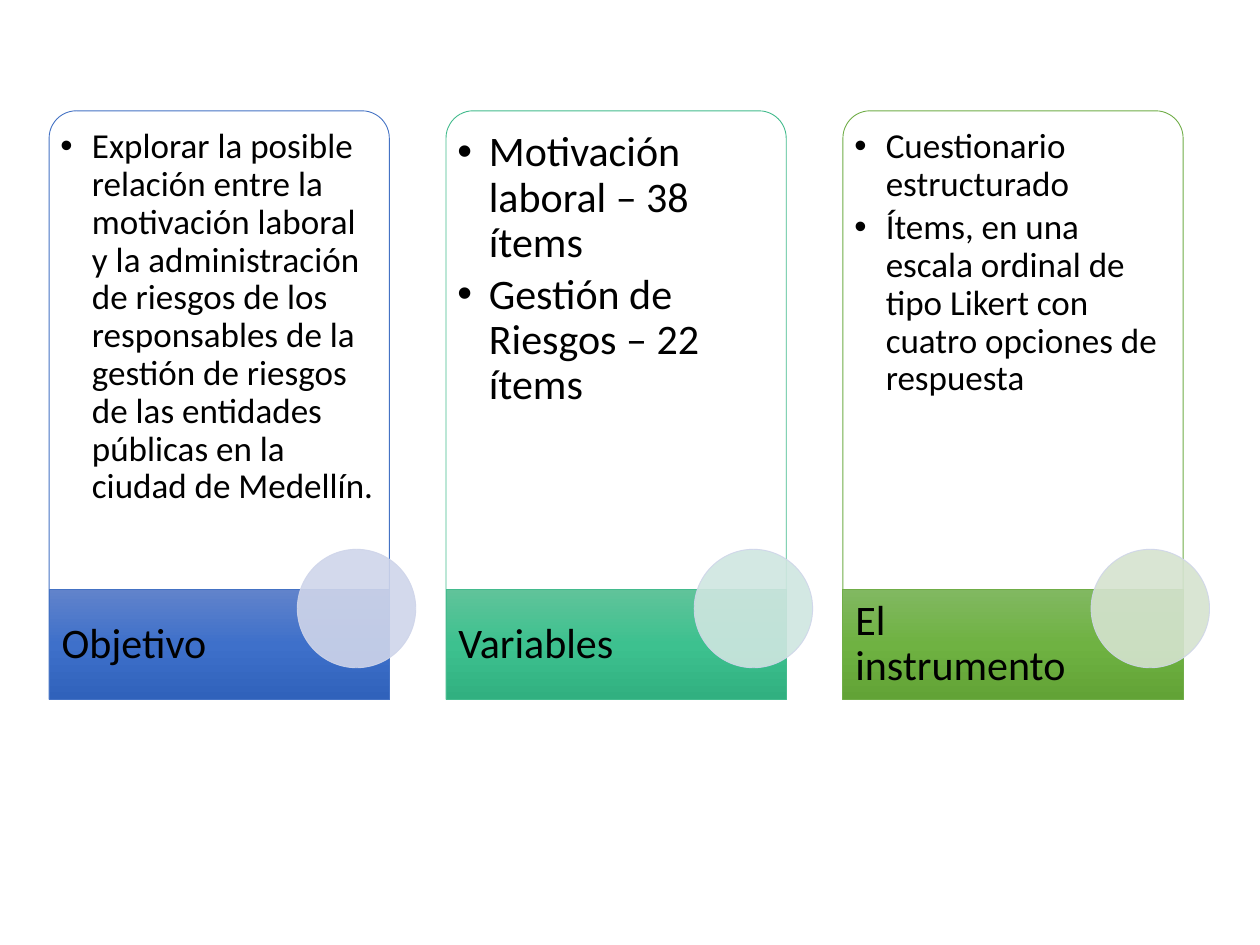
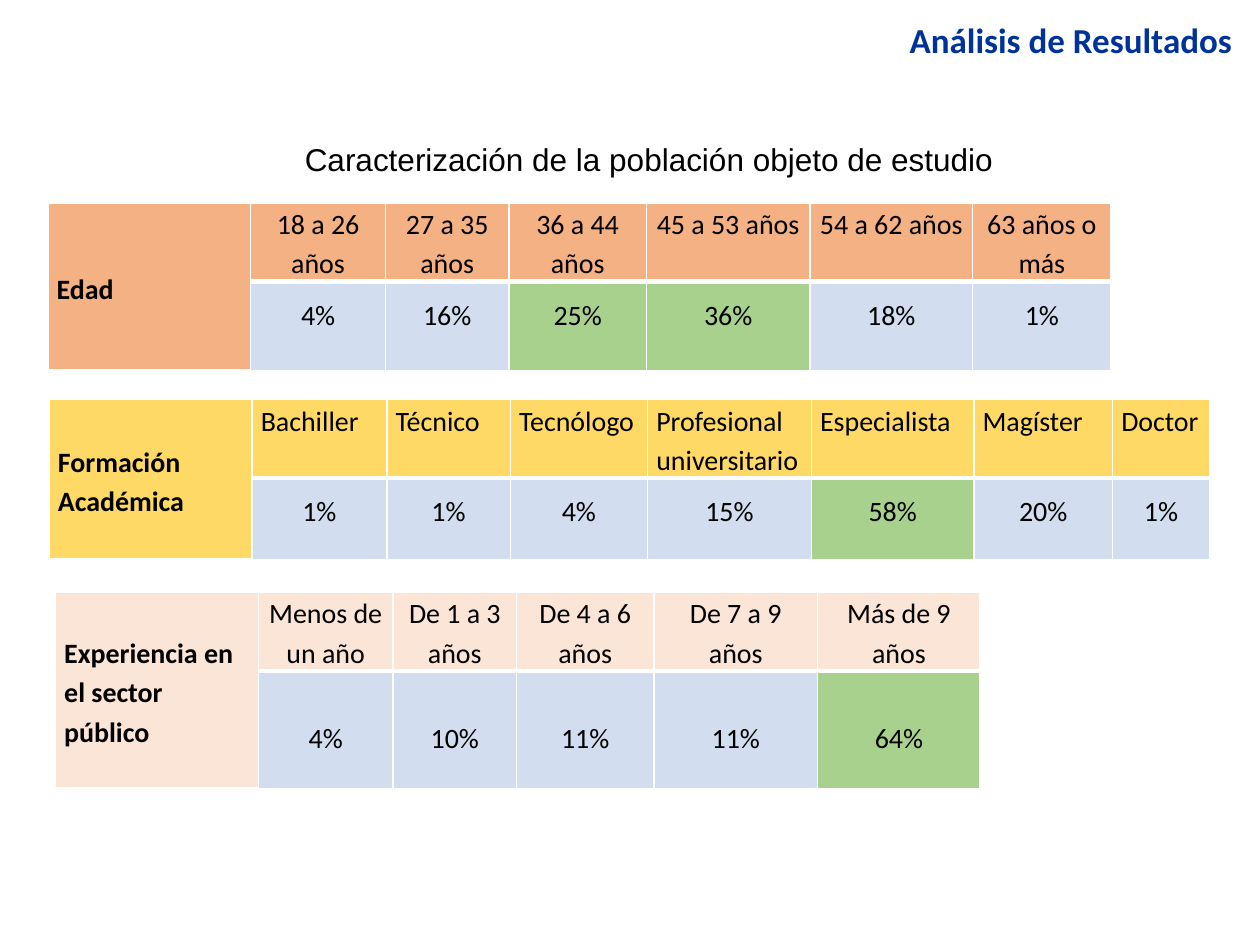
from dataclasses import dataclass

import pptx
import pptx.dml.color
import pptx.enum.shapes
import pptx.enum.text
import pptx.oxml.ns
import pptx.util
from lxml import etree

RGBColor = pptx.dml.color.RGBColor
SHAPE = pptx.enum.shapes.MSO_SHAPE
ALIGN = pptx.enum.text.PP_ALIGN
ANCHOR = pptx.enum.text.MSO_ANCHOR
Inches, Pt, qn = pptx.util.Inches, pptx.util.Pt, pptx.oxml.ns.qn

# Colours
BLACK = RGBColor(0x00, 0x00, 0x00)
WHITE = RGBColor(0xFF, 0xFF, 0xFF)
NAVY = RGBColor(0x00, 0x33, 0x99)
BLUE = RGBColor(0x44, 0x72, 0xC4)
TEAL = RGBColor(0x43, 0xBB, 0x8D)
GREEN = RGBColor(0x70, 0xAD, 0x47)
PALE_BLUE = RGBColor(0xCF, 0xD5, 0xEA)
PALE_TEAL = RGBColor(0xCF, 0xE6, 0xE0)
PALE_GREEN = RGBColor(0xD5, 0xE3, 0xCF)
BLUE_BAND = (RGBColor(0x61, 0x83, 0xCB), RGBColor(0x3E, 0x70, 0xCA), RGBColor(0x30, 0x62, 0xBB))
TEAL_BAND = (RGBColor(0x60, 0xC3, 0x9A), RGBColor(0x3D, 0xC1, 0x8F), RGBColor(0x31, 0xB0, 0x80))
GREEN_BAND = (RGBColor(0x81, 0xB8, 0x61), RGBColor(0x6F, 0xB2, 0x42), RGBColor(0x62, 0xA3, 0x36))
ORANGE = RGBColor(0xF4, 0xB1, 0x83)
YELLOW = RGBColor(0xFF, 0xD9, 0x66)
PEACH = RGBColor(0xFB, 0xE5, 0xD6)
CELL_BLUE = RGBColor(0xD2, 0xDE, 0xEF)
CELL_GREEN = RGBColor(0xA9, 0xD1, 0x8E)

# Grids, in inches
SLIDE_WIDTH, SLIDE_HEIGHT = 10, 7.5
CARD_LEFT, CARD_TOP, CARD_PITCH = 0.39, 0.88, 3.15
CARD_WIDTH, CARD_HEIGHT = 2.7, 4.67
BAND_HEIGHT, DISC = 0.87, 0.94
BAND_TOP = CARD_TOP + CARD_HEIGHT - BAND_HEIGHT
TABLE_COLUMNS = (1.61, 1.07, 0.98, 1.09, 1.3, 1.29, 1.1, 0.77)

# Text formats
TITLE = {"name": "Calibri", "size": Pt(20), "bold": True}
SUBTITLE = {"name": "Arial", "size": Pt(18), "bold": False}
CARD_LABEL = {"name": "Calibri", "size": Pt(24), "bold": False}
CELL = {"name": "Calibri", "size": Pt(16), "bold": False}


@dataclass(frozen=True)
class Card:
    label: str
    points: tuple[str, ...]
    size: int
    outline: RGBColor
    band: tuple[RGBColor, ...]
    disc: RGBColor
    body: int  # index of the layout's body placeholder


@dataclass(frozen=True)
class Survey:
    topic: str
    groups: tuple[str, ...]
    shares: tuple[int, ...]
    leaders: tuple[int, ...]
    color: RGBColor
    left: float
    top: float
    rows: tuple[float, float]
    group_align: ALIGN = ALIGN.CENTER
    share_anchor: ANCHOR = ANCHOR.TOP


CARDS = (
    Card("Objetivo",
         ("Explorar la posible relación entre la motivación laboral y la administración "
          "de riesgos de los responsables de la gestión de riesgos de las entidades "
          "públicas en la ciudad de Medellín.",),
         20, BLUE, BLUE_BAND, PALE_BLUE, 1),
    Card("Variables",
         ("Motivación laboral – 38 ítems", "Gestión de Riesgos – 22 ítems"),
         24, TEAL, TEAL_BAND, PALE_TEAL, 2),
    Card("El instrumento",
         ("Cuestionario estructurado",
          "Ítems, en una escala ordinal de tipo Likert con cuatro opciones de respuesta"),
         20, GREEN, GREEN_BAND, PALE_GREEN, 4),
)

SURVEYS = (
    Survey("Edad",
           ("18 a 26 años", "27 a 35 años", "36 a 44 años", "45 a 53 años",
            "54 a 62 años", "63 años o más"),
           (4, 16, 25, 36, 18, 1), (2, 3), ORANGE, 0.38, 1.61, (0.61, 0.71)),
    Survey("Formación Académica",
           ("Bachiller", "Técnico", "Tecnólogo", "Profesional universitario",
            "Especialista", "Magíster", "Doctor"),
           (1, 1, 4, 15, 58, 20, 1), (4,), YELLOW, 0.39, 3.17, (0.61, 0.65),
           group_align=ALIGN.JUSTIFY),
    Survey("Experiencia en el sector público",
           ("Menos de un año", "De 1 a 3 años", "De 4 a 6 años", "De 7 a 9 años",
            "Más de 9 años"),
           (4, 10, 11, 11, 64), (4,), PEACH, 0.44, 4.7, (0.61, 0.92),
           share_anchor=ANCHOR.MIDDLE),
)


def apply(target, values: dict) -> None:
    for attribute, value in values.items():
        setattr(target, attribute, value)


def place(shape, left: float, top: float, width: float, height: float) -> None:
    apply(shape, {"left": Inches(left), "top": Inches(top),
                  "width": Inches(width), "height": Inches(height)})


def write(paragraph, text: str, style: dict, color: RGBColor = BLACK, **layout) -> None:
    apply(paragraph, {"space_before": Pt(0), **layout})
    run = paragraph.add_run()
    run.text = text
    apply(run.font, style)
    run.font.color.rgb = color


def set_frame(frame, left: float = 0.1, top: float = 0.05, right: float = 0.1,
              bottom: float = 0.05, anchor: ANCHOR = ANCHOR.TOP) -> None:
    apply(frame, {"margin_left": Inches(left), "margin_top": Inches(top),
                  "margin_right": Inches(right), "margin_bottom": Inches(bottom),
                  "vertical_anchor": anchor, "word_wrap": True,
                  "auto_size": pptx.enum.text.MSO_AUTO_SIZE.NONE})


def add_panel(slide, preset: SHAPE, box: tuple, line: RGBColor):
    panel = slide.shapes.add_shape(preset, *map(Inches, box))
    panel.shadow.inherit = False
    panel.line.color.rgb = line
    panel.line.width = Pt(0.5)
    return panel


def fill_translucent(panel, color: RGBColor, line_too: bool = False) -> None:
    panel.fill.solid()
    panel.fill.fore_color.rgb = color
    prefixes = ("./", "./a:ln/") if line_too else ("./",)
    for prefix in prefixes:
        for tint in panel._element.spPr.xpath(prefix + "a:solidFill/a:srgbClr"):
            etree.SubElement(tint, qn("a:alpha"), val="90000")


def fill_gradient(panel, colors: tuple[RGBColor, ...]) -> None:
    panel.fill.gradient()
    panel.fill.gradient_angle = 270
    stops = panel._element.spPr.xpath(".//a:gsLst")[0]
    for stop in list(stops):
        stops.remove(stop)
    for step, color in enumerate(colors):
        position = 100000 * step // (len(colors) - 1)
        stop = etree.SubElement(stops, qn("a:gs"), pos=str(position))
        etree.SubElement(stop, qn("a:srgbClr"), val=str(color))


def add_bullet(paragraph) -> None:
    properties = paragraph._p.get_or_add_pPr()
    properties.set("marL", str(Inches(0.25)))
    properties.set("indent", str(-Inches(0.25)))
    etree.SubElement(properties, qn("a:buFont"), typeface="Arial")
    etree.SubElement(properties, qn("a:buChar"), char="•")


def draw_card(slide, card: Card, column: int) -> None:
    left = CARD_LEFT + column * CARD_PITCH
    outline = add_panel(slide, SHAPE.ROUND_2_SAME_RECTANGLE,
                        (left, CARD_TOP, CARD_WIDTH, CARD_HEIGHT), card.outline)
    outline.adjustments[0], outline.adjustments[1] = 0.08, 0
    fill_translucent(outline, WHITE)

    # List, raised above its outline
    points = slide.placeholders[card.body]
    outline._element.addnext(points._element)
    place(points, left + 0.06, CARD_TOP + 0.06, CARD_WIDTH - 0.13, CARD_HEIGHT - 0.06)
    frame = points.text_frame
    set_frame(frame, 0.03, card.size / 250, 0.03, 0.03)
    for number, point in enumerate(card.points):
        paragraph = frame.add_paragraph() if number else frame.paragraphs[0]
        paragraph.level = 1
        add_bullet(paragraph)
        write(paragraph, point, {**CARD_LABEL, "size": Pt(card.size)},
              alignment=ALIGN.LEFT, line_spacing=0.9, space_after=Pt(0.15 * card.size))

    # Band, its label and the disc over its corner
    band = add_panel(slide, SHAPE.RECTANGLE,
                     (left, BAND_TOP, CARD_WIDTH, BAND_HEIGHT), card.outline)
    fill_gradient(band, card.band)
    label = slide.shapes.add_textbox(*map(Inches, (left, BAND_TOP, 1.9, BAND_HEIGHT)))
    set_frame(label.text_frame, 0.1, 0, 0.03, 0, ANCHOR.MIDDLE)
    write(label.text_frame.paragraphs[0], card.label, CARD_LABEL, line_spacing=0.9)
    disc = add_panel(slide, SHAPE.OVAL, (left + 1.97, BAND_TOP - 0.32, DISC, DISC), PALE_BLUE)
    fill_translucent(disc, card.disc, line_too=True)


def set_borders(cell, bottom: float) -> None:
    properties = cell._tc.get_or_add_tcPr()
    widths = {"a:lnL": 1, "a:lnR": 1, "a:lnT": 1, "a:lnB": bottom}
    for position, (edge, width) in enumerate(widths.items()):
        line = etree.Element(qn(edge), w=str(Pt(width)))
        solid = etree.SubElement(line, qn("a:solidFill"))
        etree.SubElement(solid, qn("a:srgbClr"), val=str(WHITE))
        properties.insert(position, line)


def fill_cell(cell, text: str, color: RGBColor, anchor: ANCHOR, align: ALIGN,
              spacing: float, bold: bool = False) -> None:
    apply(cell, {"margin_left": Inches(0.07), "margin_right": Inches(0.07),
                 "margin_top": 0, "margin_bottom": 0, "vertical_anchor": anchor})
    cell.fill.solid()
    cell.fill.fore_color.rgb = color
    write(cell.text_frame.paragraphs[0], text, {**CELL, "bold": bold},
          alignment=align, line_spacing=spacing)


def draw_survey(slide, survey: Survey) -> None:
    box = (survey.left, survey.top, sum(TABLE_COLUMNS), sum(survey.rows))
    table = slide.shapes.add_table(2, len(TABLE_COLUMNS), *map(Inches, box)).table
    apply(table, {"first_row": False, "horz_banding": False})
    for column, width in zip(table.columns, TABLE_COLUMNS):
        column.width = Inches(width)
    for row, height in zip(table.rows, survey.rows):
        row.height = Inches(height)
    for row, bottom in enumerate((3, 1)):
        for cell in table.rows[row].cells:
            cell.fill.background()
            set_borders(cell, bottom)

    table.cell(0, 0).merge(table.cell(1, 0))
    fill_cell(table.cell(0, 0), survey.topic, survey.color, ANCHOR.MIDDLE,
              ALIGN.LEFT, 1.15, bold=True)
    for index, (group, share) in enumerate(zip(survey.groups, survey.shares)):
        fill_cell(table.cell(0, index + 1), group, survey.color, ANCHOR.TOP,
                  survey.group_align, 1.15)
        share_color = CELL_GREEN if index in survey.leaders else CELL_BLUE
        fill_cell(table.cell(1, index + 1), f"{share}%", share_color,
                  survey.share_anchor, ALIGN.CENTER, 1.5)

    # Unused columns at the end become one cell per row
    first_unused, last = len(survey.groups) + 1, len(TABLE_COLUMNS) - 1
    if first_unused < last:
        for row in range(2):
            table.cell(row, first_unused).merge(table.cell(row, last))


def build_method(deck) -> None:
    slide = deck.slides.add_slide(deck.slide_layouts.get_by_name("Comparison"))
    for column, card in enumerate(CARDS):
        draw_card(slide, card, column)
    for unused in list(slide.placeholders):
        if not unused.text_frame.text:
            unused._element.getparent().remove(unused._element)


def build_results(deck) -> None:
    slide = deck.slides.add_slide(deck.slide_layouts.get_by_name("Title Only"))
    title = slide.shapes.title
    place(title, 6.02, 0.1, 3.86, 0.44)
    set_frame(title.text_frame)
    write(title.text_frame.paragraphs[0], "Análisis de Resultados", TITLE, NAVY,
          alignment=ALIGN.RIGHT)
    subtitle = slide.shapes.add_textbox(*map(Inches, (1.3, 1.06, 7.7, 0.4)))
    set_frame(subtitle.text_frame, anchor=ANCHOR.MIDDLE)
    write(subtitle.text_frame.paragraphs[0],
          "Caracterización de la población objeto de estudio", SUBTITLE,
          alignment=ALIGN.CENTER)
    for survey in SURVEYS:
        draw_survey(slide, survey)


def main() -> None:
    deck = pptx.Presentation()
    apply(deck, {"slide_width": Inches(SLIDE_WIDTH), "slide_height": Inches(SLIDE_HEIGHT)})
    build_method(deck)
    build_results(deck)
    deck.save("out.pptx")


if __name__ == "__main__":
    main()
